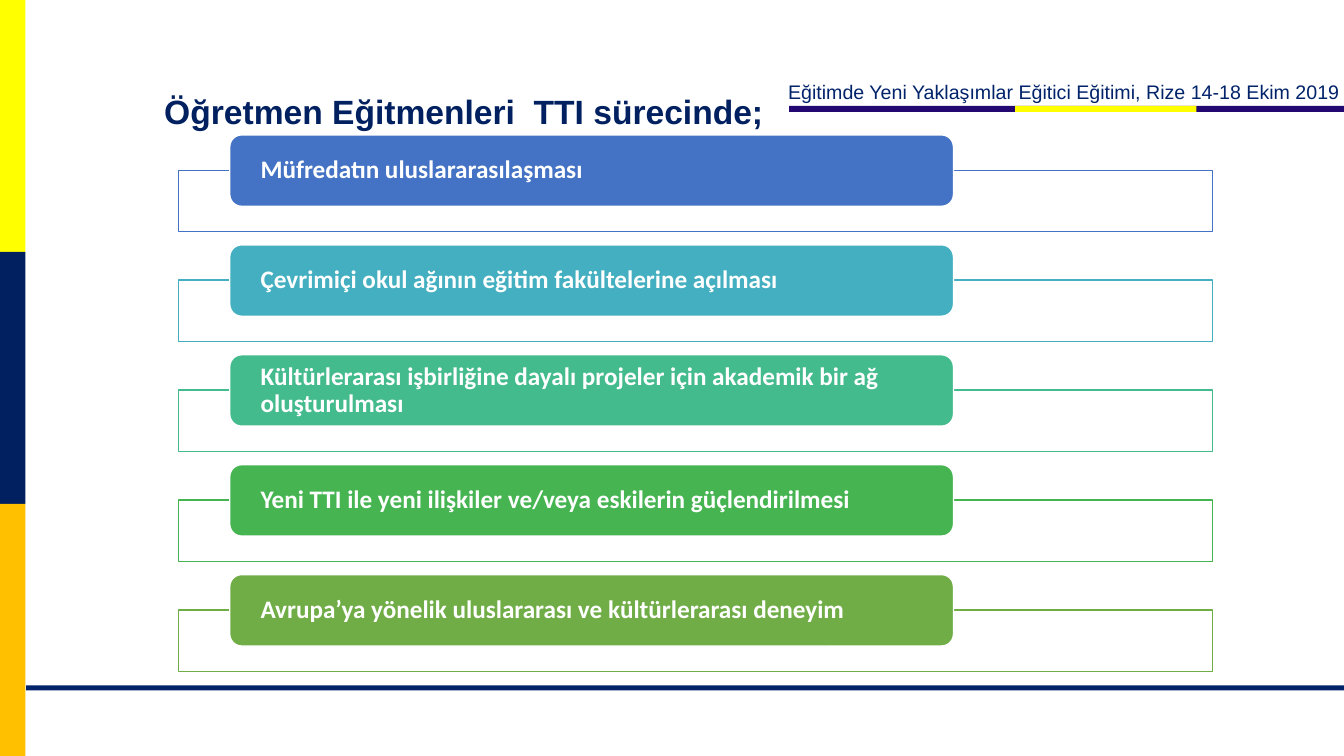
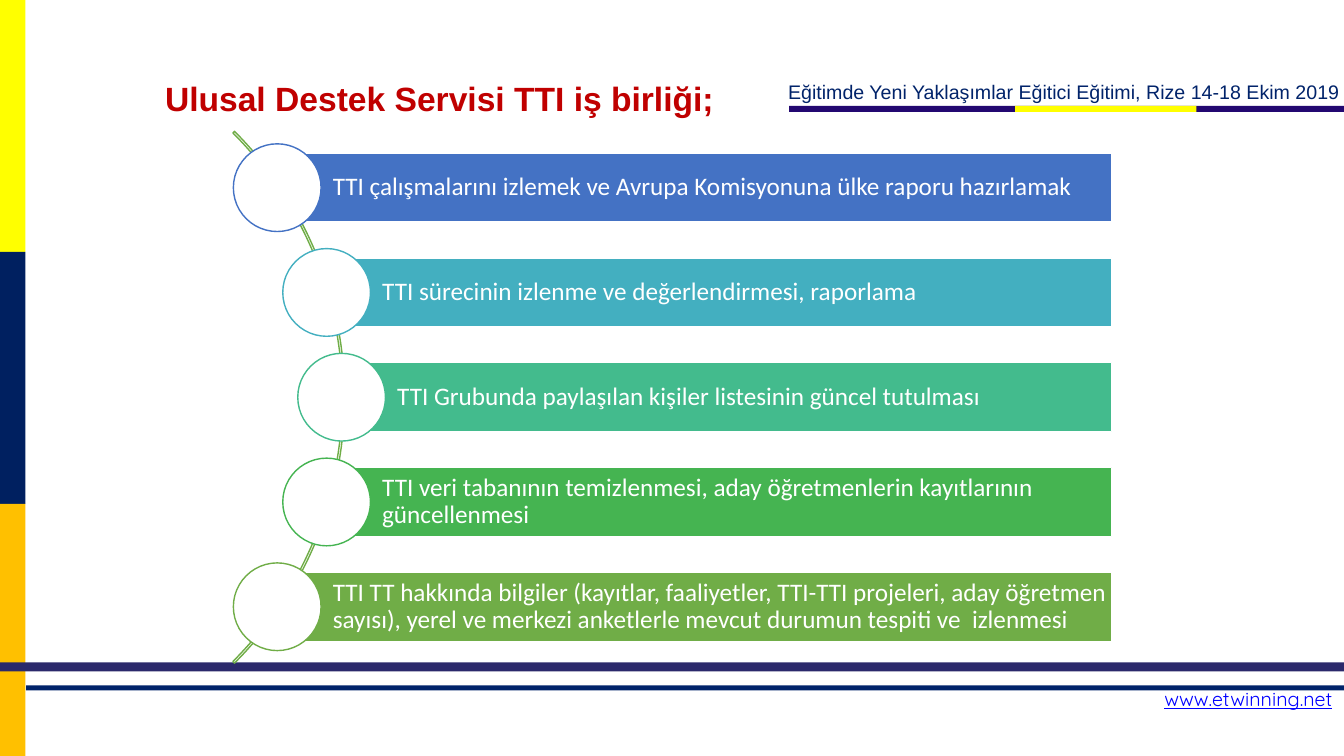
"""Builds two slides on the TTI process: teacher trainers and the national support service."""
from dataclasses import dataclass
from math import sqrt

from pptx import Presentation
from pptx.dml.color import RGBColor
from pptx.enum.shapes import MSO_SHAPE
from pptx.enum.text import MSO_ANCHOR, PP_ALIGN
from pptx.util import Cm, Pt

HEADER = "Eğitimde Yeni Yaklaşımlar Eğitici Eğitimi, Rize 14-18 Ekim 2019"
TRAINERS_TITLE = "Öğretmen Eğitmenleri  TTI sürecinde;"
TRAINER_GOALS = [
    "Müfredatın uluslararasılaşması",
    "Çevrimiçi okul ağının eğitim fakültelerine açılması",
    "Kültürlerarası işbirliğine dayalı projeler için akademik bir ağ oluşturulması",
    "Yeni TTI ile yeni ilişkiler ve/veya eskilerin güçlendirilmesi",
    "Avrupa’ya yönelik uluslararası ve kültürlerarası deneyim",
]
SUPPORT_TITLE = "Ulusal Destek Servisi TTI iş birliği;"
SUPPORT_TASKS = [
    "TTI çalışmalarını izlemek ve Avrupa Komisyonuna ülke raporu hazırlamak",
    "TTI sürecinin izlenme ve değerlendirmesi, raporlama",
    "TTI Grubunda paylaşılan kişiler listesinin güncel tutulması",
    "TTI veri tabanının temizlenmesi, aday öğretmenlerin kayıtlarının güncellenmesi",
    "TTI TT hakkında bilgiler (kayıtlar, faaliyetler, TTI-TTI projeleri, aday öğretmen "
    "sayısı), yerel ve merkezi anketlerle mevcut durumun tespiti ve  izlenmesi",
]
WEBSITE = "www.etwinning.net"


@dataclass(frozen=True)
class Theme:
    white: str = "FFFFFF"
    navy: str = "002060"
    header: str = "01236A"
    violet: str = "230871"
    indigo: str = "2B296B"
    yellow: str = "FFFF00"
    amber: str = "FFC000"
    red: str = "C00000"
    link: str = "0000FF"
    steps: tuple = ("4472C4", "43AFC0", "43BB8D", "45B451", "70AD47")
    heading_font: str = "Arial"
    body_font: str = "Calibri"
    link_font: str = "Quicksand"
    title_size: int = 24
    body_size: int = 18
    small_size: int = 14


THEME = Theme()
WIDTH, HEIGHT = 33.87, 19.05
NO_STYLE_NO_GRID = "{2D5ABB26-0587-4C30-8999-92F81FD0307C}"


def write(frame, text, *, size, color, font=THEME.body_font, bold=False, underline=False,
          align=PP_ALIGN.LEFT, spacing=None, anchor=None, insets=None):
    frame.word_wrap = True
    if anchor is not None:
        frame.vertical_anchor = anchor
    if insets:
        left, top, right, bottom = map(Cm, insets)
        frame.margin_left, frame.margin_top = left, top
        frame.margin_right, frame.margin_bottom = right, bottom
    paragraph = frame.paragraphs[0]
    paragraph.alignment = align
    paragraph.line_spacing = spacing
    run = paragraph.add_run()
    run.text = text
    run.font.name, run.font.size = font, Pt(size)
    run.font.bold, run.font.underline = bold, underline
    run.font.color.rgb = RGBColor.from_string(color)


def draw(slide, preset, box, fill=None, line=None):
    shape = slide.shapes.add_shape(preset, *map(Cm, box))
    shape.shadow.inherit = False
    if fill:
        shape.fill.solid()
        shape.fill.fore_color.rgb = RGBColor.from_string(fill)
    else:
        shape.fill.background()
    if line:
        shape.line.color.rgb = RGBColor.from_string(line)
        shape.line.width = Pt(1)
    else:
        shape.line.fill.background()
    return shape


def label(slide, box, text, **style):
    caption = slide.shapes.add_textbox(*map(Cm, box))
    write(caption.text_frame, text, font=THEME.heading_font, **style)


def add_title(slide, box, text, color):
    label(slide, box, text, size=THEME.title_size, color=color, bold=True)


def write_step(shape, text, insets, bold=False):
    write(shape.text_frame, text, size=THEME.body_size, color=THEME.white, bold=bold,
          spacing=0.9, anchor=MSO_ANCHOR.MIDDLE, insets=insets)


def dress_layout(layout, slide):
    for placeholder in list(layout.placeholders):
        layout.shapes._spTree.remove(placeholder._element)
    label(slide, (19.61, 1.9, 14.55, 0.86), HEADER, size=THEME.small_size, color=THEME.header)
    band = HEIGHT / 3
    for row, color in enumerate((THEME.yellow, THEME.navy, THEME.amber)):
        draw(slide, MSO_SHAPE.RECTANGLE, (0, row * band, 0.64, band), color)
    for box, color in (
        ((19.89, 2.67, 13.98, 0.15), THEME.violet),
        ((25.58, 2.67, 4.57, 0.15), THEME.yellow),
        ((0.66, 17.27, 33.21, 0.13), THEME.header),
    ):
        draw(slide, MSO_SHAPE.RECTANGLE, box, color)
    for part in list(slide.shapes):
        layout.shapes._spTree.append(part._element)


def build_trainers(slide):
    top, pitch = 3.4, 2.77
    for row, (goal, color) in enumerate(zip(TRAINER_GOALS, THEME.steps)):
        y = top + row * pitch
        draw(slide, MSO_SHAPE.RECTANGLE, (4.5, y + 0.89, 26.06, 1.55), THEME.white, color)
        pill = draw(slide, MSO_SHAPE.ROUNDED_RECTANGLE, (5.79, y, 18.24, 1.8), color, THEME.white)
        write_step(pill, goal, (0.69, 0, 0.69, 0), bold=True)
    add_title(slide, (3.89, 2.16, 22.15, 1.27), TRAINERS_TITLE, THEME.navy)


def add_website(slide):
    table = slide.shapes.add_table(1, 2, Cm(3.91), Cm(17.09), Cm(29.67), Cm(0.89)).table
    table.first_row = table.horz_banding = False
    table._tbl.tblPr[0].text = NO_STYLE_NO_GRID
    for column, width in zip(table.columns, (3.86, 25.81)):
        column.width = Cm(width)
    for cell in table.rows[0].cells:
        cell.fill.background()
        cell.margin_left = cell.margin_right = cell.margin_bottom = 0
        cell.margin_top = Cm(0.2)
        cell.vertical_anchor = MSO_ANCHOR.MIDDLE
    table.cell(0, 0).text_frame.paragraphs[0].font.size = Pt(THEME.small_size)
    write(table.cell(0, 1).text_frame, WEBSITE, size=THEME.small_size, color=THEME.link,
          font=THEME.link_font, underline=True, align=PP_ALIGN.RIGHT, spacing=Pt(16))


def build_support(slide):
    draw(slide, MSO_SHAPE.RECTANGLE, (0, 16.69, WIDTH, 0.23), THEME.indigo)
    add_website(slide)
    center_x, center_y, arc_size, radius = -0.79, 10.01, 18.95, 9.4
    arc = draw(slide, MSO_SHAPE.BLOCK_ARC,
               (center_x - arc_size / 2, center_y - arc_size / 2, arc_size, arc_size),
               line=THEME.steps[-1])
    for index, angle in enumerate((189, 27, 0.003)):
        arc.adjustments[index] = angle
    pitch, bar_height, node, right = 2.64, 1.74, 2.21, 28.02
    for row, (task, color) in enumerate(zip(SUPPORT_TASKS, THEME.steps)):
        offset = (row - len(SUPPORT_TASKS) // 2) * pitch
        x, y = center_x + sqrt(radius ** 2 - offset ** 2), center_y + offset
        bar = draw(slide, MSO_SHAPE.RECTANGLE,
                   (x, y - bar_height / 2, right - x, bar_height), color, THEME.white)
        write_step(bar, task, (1.4, 0.13, 0.13, 0.13))
        draw(slide, MSO_SHAPE.OVAL, (x - node / 2, y - node / 2, node, node), THEME.white, color)
    add_title(slide, (3.91, 1.83, 17.4, 1.27), SUPPORT_TITLE, THEME.red)


def main():
    deck = Presentation()
    deck.slide_width, deck.slide_height = Cm(WIDTH), Cm(HEIGHT)
    blank = deck.slide_layouts[6]
    trainers, support = (deck.slides.add_slide(blank) for _ in range(2))
    dress_layout(blank, trainers)
    build_trainers(trainers)
    build_support(support)
    deck.save("out.pptx")


if __name__ == "__main__":
    main()
